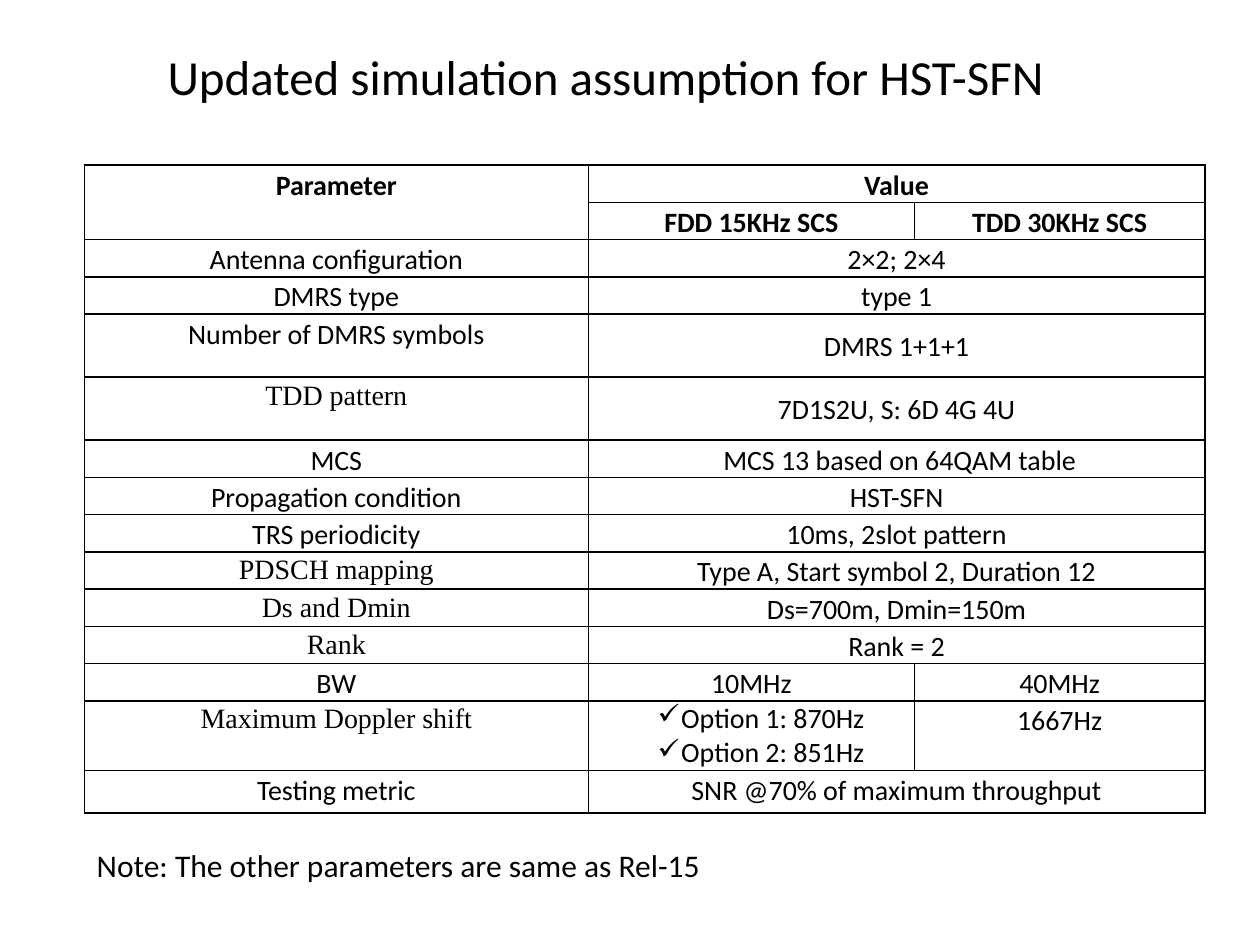
from lxml.etree import SubElement as Sub
from pptx import Presentation
from pptx.dml.color import RGBColor as RGB
from pptx.enum.text import MSO_ANCHOR as Anchor, PP_ALIGN as Align
from pptx.oxml.ns import qn
from pptx.util import Pt

# Content: label, values (one value spans both columns)
TITLE = "Updated simulation assumption for HST-SFN "
NOTE = "Note: The other parameters are same as Rel-15"
ROWS = [
    ("Parameter", ["Value"]),
    ("", ["FDD 15KHz SCS", "TDD 30KHz SCS"]),
    ("Antenna configuration", ["2×2; 2×4"]),
    ("DMRS type", ["type 1"]),
    ("Number of DMRS symbols", ["DMRS 1+1+1"]),
    ("TDD pattern", ["7D1S2U, S: 6D 4G 4U"]),
    ("MCS", [" MCS 13 based on 64QAM table"]),
    ("Propagation condition", ["HST-SFN"]),
    ("TRS periodicity", ["10ms, 2slot pattern"]),
    ("PDSCH mapping", ["Type A, Start symbol 2, Duration 12"]),
    ("Ds and Dmin", ["Ds=700m, Dmin=150m"]),
    ("Rank", ["Rank = 2"]),
    ("BW", ["10MHz", "40MHz"]),
    ("Maximum Doppler shift", ["Option 1: 870Hz\nOption 2: 851Hz", "1667Hz"]),
    ("Testing metric", ["SNR @70% of maximum throughput"]),
]
HEAD = 2
SERIF = {"TDD pattern", "PDSCH mapping", "Ds and Dmin", "Rank",
         "Maximum Doppler shift"}
TALL = {"Number of DMRS symbols": 36, "TDD pattern": 36,
        "Maximum Doppler shift": 39.7, "Testing metric": 24.3}
MID = {"Number of DMRS symbols", "TDD pattern"}

THEME = {"ink": "000000", "sans": "Calibri", "serif": "Times New Roman",
         "title": 28, "cell": 16, "note": 18, "line": 1}
LEFT, TOP, ROW = 48.2, 94.3, 21.3
COLS = [288, 186.3, 166]


def style(par, size, font="sans", bold=False):
    for run in par.runs:
        run.font.size = Pt(THEME[size])
        run.font.name = THEME[font]
        run.font.bold = bold
        run.font.color.rgb = RGB.from_string(THEME["ink"])


def add_text(slide, text, box, size, wrap, align):
    frame = slide.shapes.add_textbox(*map(Pt, box)).text_frame
    frame.word_wrap = wrap
    frame.vertical_anchor = Anchor.MIDDLE
    frame.text = text
    frame.paragraphs[0].alignment = align
    style(frame.paragraphs[0], size)


def border(cell):
    props = cell._tc.get_or_add_tcPr()
    for side in ("lnL", "lnR", "lnT", "lnB"):
        line = Sub(props, qn("a:" + side), w=str(Pt(THEME["line"])))
        Sub(Sub(line, qn("a:solidFill")), qn("a:srgbClr"), val=THEME["ink"])


def bullet(par):
    props = par._p.get_or_add_pPr()
    props.set("marL", str(Pt(49.5)))
    props.set("indent", str(Pt(-13.5)))
    Sub(props, qn("a:buChar"), char="✓")


def fill_cell(cell, text, font, bold, mid):
    cell.text_frame.text = text
    cell.vertical_anchor = Anchor.MIDDLE if mid else Anchor.TOP
    pars = cell.text_frame.paragraphs
    for par in pars:
        if len(pars) > 1:
            bullet(par)
        else:
            par.alignment = Align.CENTER
            par.line_spacing = 1.06
        style(par, "cell", font, bold)


deck = Presentation()
deck.slide_width, deck.slide_height = Pt(720), Pt(540)
slide = deck.slides.add_slide(deck.slide_layouts[6])

# Title
add_text(slide, TITLE, (25.2, 21.6, 648, 44), "title", True, Align.CENTER)

# Table grid
highs = [TALL.get(label, ROW) for label, _ in ROWS]
table = slide.shapes.add_table(len(ROWS), len(COLS), Pt(LEFT), Pt(TOP),
                               Pt(sum(COLS)), Pt(sum(highs))).table
table.first_row = table.horz_banding = False
for col, wide in zip(table.columns, COLS):
    col.width = Pt(wide)
for row, high in zip(table.rows, highs):
    row.height = Pt(high)
for cell in table.iter_cells():
    cell.margin_left = cell.margin_right = Pt(3.6)
    cell.margin_top, cell.margin_bottom = Pt(0.72), 0
    border(cell)
    cell.fill.background()
    style_size = cell.text_frame.paragraphs[0].font
    style_size.size = Pt(THEME["cell"])

# Table text and spans
table.cell(0, 0).merge(table.cell(1, 0))
for i, (label, values) in enumerate(ROWS):
    bold = i < HEAD
    if label:
        font = "serif" if label in SERIF else "sans"
        fill_cell(table.cell(i, 0), label, font, bold, False)
    if len(values) == 1:
        table.cell(i, 1).merge(table.cell(i, 2))
    for j, text in enumerate(values, 1):
        fill_cell(table.cell(i, j), text, "sans", bold, label in MID)

# Note
add_text(slide, NOTE, (LEFT, 479.5, 363.6, 29), "note", False, Align.LEFT)

deck.save("out.pptx")
